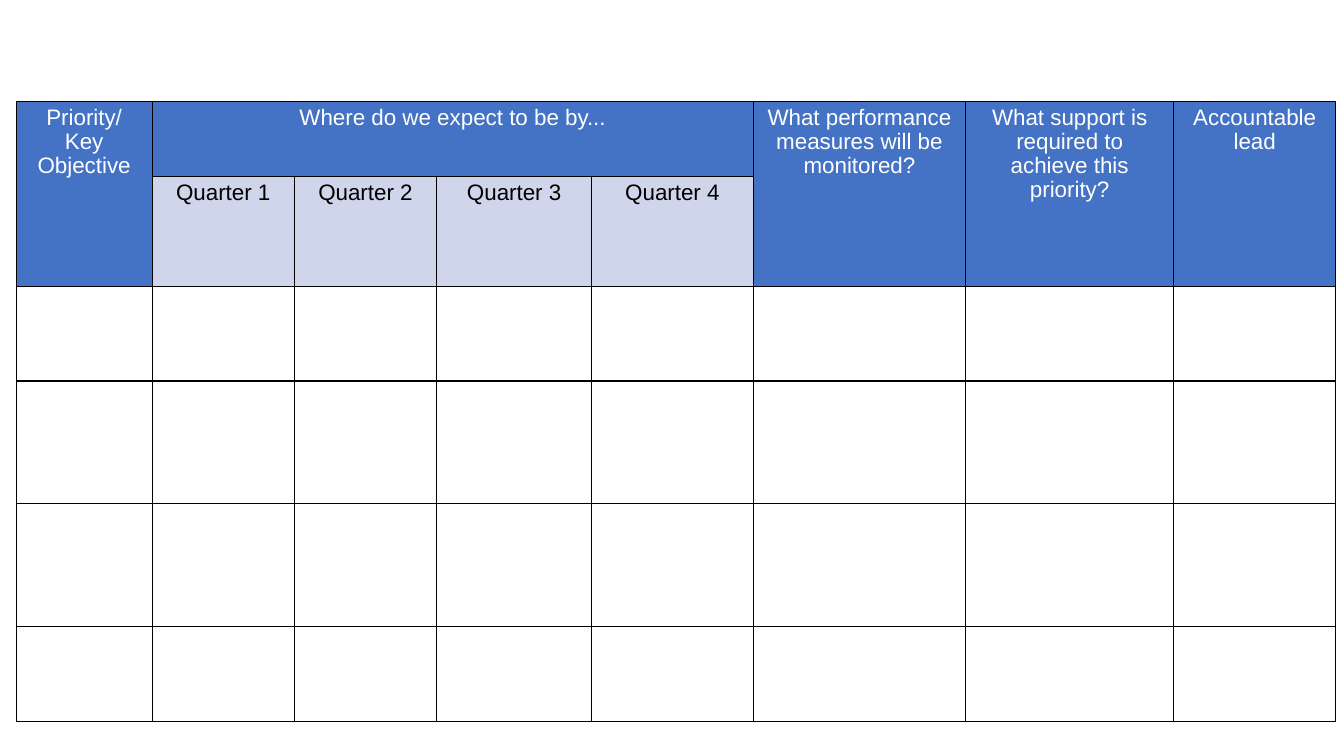
import lxml.etree
import pptx
import pptx.dml.color
import pptx.enum.text
import pptx.oxml.ns
import pptx.util

COLORS = {
    "header": "4472C4",
    "quarter": "CFD5EA",
    "border": "000000",
    "header_text": "FFFFFF",
    "quarter_text": "000000",
}
SLIDE_WIDTH, SLIDE_HEIGHT = 13.33, 7.5
TABLE_LEFT, TABLE_TOP = 0.16, 1.01
COLUMN_WIDTHS = [1.35, 1.41, 1.41, 1.54, 1.6, 2.11, 2.06, 1.61]
ROW_HEIGHTS = [0.74, 1.09, 0.94, 1.22, 1.22, 0.94]
FIRST_QUARTER, LAST_QUARTER = 1, 4
TALL_HEADERS = {
    0: "Priority/\nKey Objective",
    5: "What performance measures will be monitored?",
    6: "What support is required to achieve this priority?",
    7: "Accountable lead",
}


def color(name):
    return pptx.dml.color.RGBColor.from_string(COLORS[name])


def add_planning_table(slide):
    frame = slide.shapes.add_table(
        len(ROW_HEIGHTS),
        len(COLUMN_WIDTHS),
        pptx.util.Inches(TABLE_LEFT),
        pptx.util.Inches(TABLE_TOP),
        pptx.util.Inches(sum(COLUMN_WIDTHS)),
        pptx.util.Inches(sum(ROW_HEIGHTS)),
    )
    table = frame.table
    for column, width in zip(table.columns, COLUMN_WIDTHS):
        column.width = pptx.util.Inches(width)
    for row, height in zip(table.rows, ROW_HEIGHTS):
        row.height = pptx.util.Inches(height)
    return table


def add_borders(cell):
    qualified = pptx.oxml.ns.qn
    properties = cell._tc.get_or_add_tcPr()
    for side in ("lnL", "lnR", "lnT", "lnB"):
        line = lxml.etree.SubElement(
            properties, qualified(f"a:{side}"), w=str(pptx.util.Pt(1))
        )
        fill = lxml.etree.SubElement(line, qualified("a:solidFill"))
        lxml.etree.SubElement(fill, qualified("a:srgbClr"), val=COLORS["border"])


def fill_cell(cell, text, style):
    cell.fill.solid()
    cell.fill.fore_color.rgb = color(style)
    cell.text = text
    for paragraph in cell.text_frame.paragraphs:
        paragraph.alignment = pptx.enum.text.PP_ALIGN.CENTER
        paragraph.line_spacing = 0.96
        paragraph.font.name = "Arial"
        paragraph.font.size = pptx.util.Pt(16)
        paragraph.font.bold = False
        paragraph.font.color.rgb = color(f"{style}_text")


def main():
    presentation = pptx.Presentation()
    presentation.slide_width = pptx.util.Inches(SLIDE_WIDTH)
    presentation.slide_height = pptx.util.Inches(SLIDE_HEIGHT)
    slide = presentation.slides.add_slide(presentation.slide_layouts[6])

    table = add_planning_table(slide)
    for cell in table.iter_cells():
        add_borders(cell)
        cell.fill.background()

    for column, text in TALL_HEADERS.items():
        table.cell(0, column).merge(table.cell(1, column))
        fill_cell(table.cell(0, column), text, "header")

    expectation = table.cell(0, FIRST_QUARTER)
    expectation.merge(table.cell(0, LAST_QUARTER))
    fill_cell(expectation, "Where do we expect to be by...", "header")
    for quarter in range(FIRST_QUARTER, LAST_QUARTER + 1):
        fill_cell(table.cell(1, quarter), f"Quarter {quarter}", "quarter")

    presentation.save("out.pptx")


if __name__ == "__main__":
    main()
